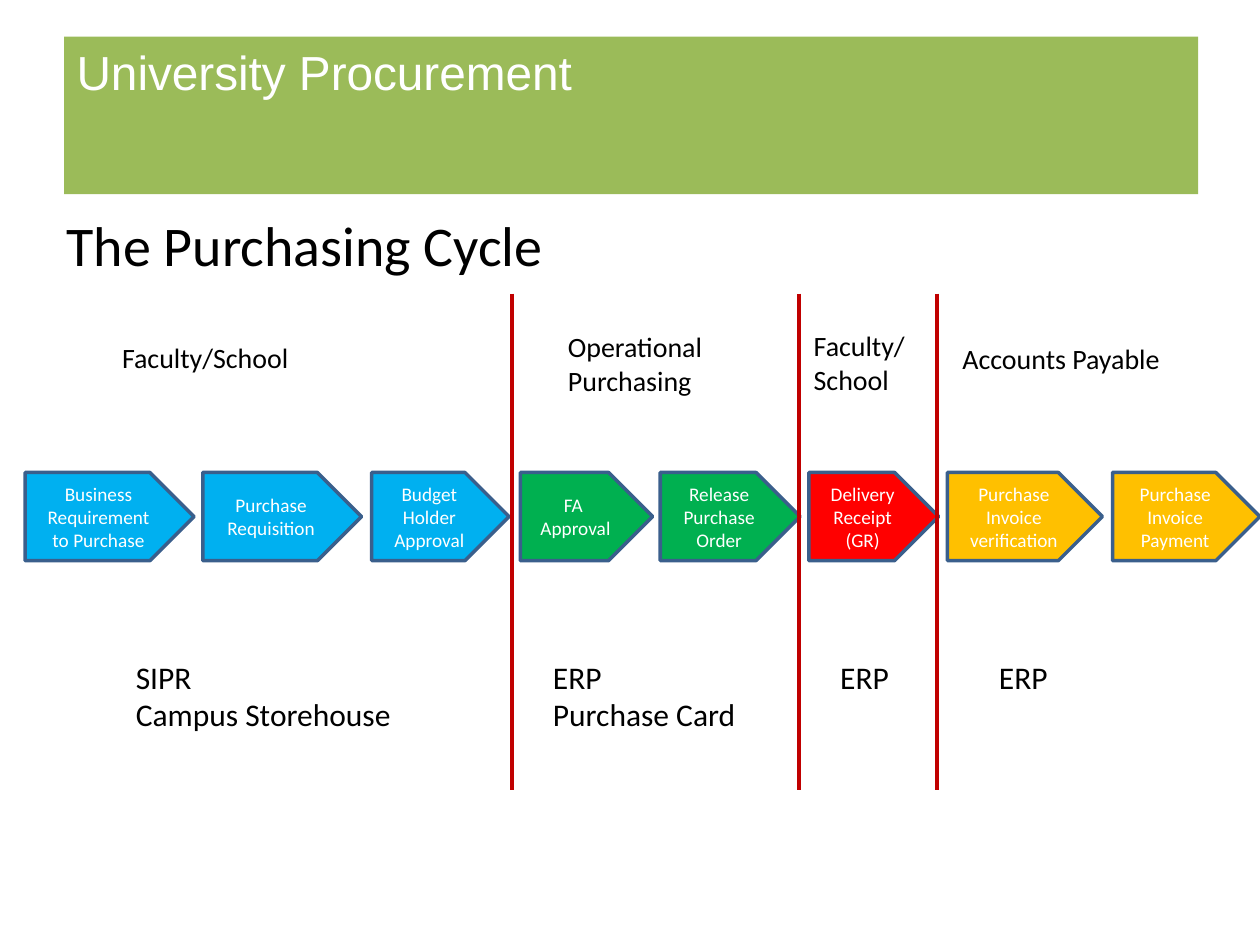
from dataclasses import dataclass
from pptx import Presentation
from pptx.dml.color import RGBColor as Rgb
from pptx.enum.shapes import MSO_CONNECTOR as Conn, MSO_SHAPE as Kind
from pptx.enum.text import MSO_ANCHOR as Anchor, MSO_AUTO_SIZE as Auto, PP_ALIGN as Align
from pptx.oxml.ns import qn
from pptx.util import Inches, Pt
from lxml.etree import SubElement

HUES = {
    "band": "9BBB59", "blue": "00B0F0", "green": "00B050", "red": "FF0000",
    "gold": "FFC000", "edge": "3A5F8C", "rule": "C00000",
    "white": "FFFFFF", "black": "000000",
}
STEP_TOP, STEP_HIGH = 3.75, 0.7
RULE_TOP, RULE_END = 2.33, 6.27


@dataclass
class Step:
    left: float
    wide: float
    hue: str
    lines: list[str]


@dataclass
class Label:
    left: float
    top: float
    wide: float
    high: float
    size: int
    lines: list[str]


STEPS = [
    Step(0.2, 1.34, "blue", ["Business Requirement to Purchase"]),
    Step(1.61, 1.26, "blue", ["Purchase Requisition"]),
    Step(2.95, 1.09, "blue", ["Budget Holder Approval"]),
    Step(4.13, 1.05, "green", ["FA ", "Approval"]),
    Step(5.24, 1.11, "green", ["Release Purchase Order"]),
    Step(6.42, 1.03, "red", ["Delivery Receipt (GR)"]),
    Step(7.52, 1.23, "gold", ["Purchase Invoice verification"]),
    Step(8.83, 1.17, "gold", ["Purchase Invoice Payment"]),
]
RULES = [4.06, 6.34, 7.44]
LABELS = [
    Label(0.43, 1.62, 9.22, 0.65, 32, ["The Purchasing Cycle"]),
    Label(0.87, 2.65, 2.32, 0.37, 16, ["Faculty/School"]),
    Label(6.36, 2.56, 1.16, 0.64, 16, ["Faculty/", "School"]),
    Label(7.54, 2.66, 2.32, 0.37, 16, ["Accounts Payable"]),
    Label(4.41, 2.57, 1.93, 0.64, 16, ["Operational Purchasing"]),
    Label(0.98, 5.17, 2.36, 0.71, 18, ["SIPR", "Campus Storehouse"]),
    Label(4.29, 5.17, 1.89, 0.71, 18, ["ERP", "Purchase Card"]),
    Label(6.57, 5.17, 0.71, 0.4, 18, ["ERP"]),
    Label(7.83, 5.17, 0.71, 0.4, 18, ["ERP"]),
]


def tint(name: str) -> Rgb:
    return Rgb.from_string(HUES[name])


def write(frame, lines: list[str], size: float, hue: str,
          face: str = "Calibri", align=Align.LEFT) -> None:
    frame.word_wrap = True
    for spot, line in enumerate(lines):
        para = frame.paragraphs[0] if spot == 0 else frame.add_paragraph()
        para.alignment = align
        run = para.add_run()
        run.text = line
        run.font.size = Pt(size)
        run.font.name = face
        run.font.color.rgb = tint(hue)


def block(slide, kind, left: float, top: float, wide: float, high: float, hue: str):
    shape = slide.shapes.add_shape(
        kind, Inches(left), Inches(top), Inches(wide), Inches(high))
    shape.shadow.inherit = False
    shape.fill.solid()
    shape.fill.fore_color.rgb = tint(hue)
    return shape


def draw_band(slide) -> None:
    band = block(slide, Kind.RECTANGLE, 0.51, 0.29, 9, 1.25, "band")
    band.line.fill.background()
    band.text_frame.vertical_anchor = Anchor.TOP
    write(band.text_frame, ["University Procurement"], 27.3, "white", "Arial")


def draw_step(slide, step: Step) -> None:
    shape = block(slide, Kind.PENTAGON, step.left, STEP_TOP, step.wide, STEP_HIGH, step.hue)
    shape.line.color.rgb = tint("edge")
    shape.line.width = Pt(2)
    shape.text_frame.vertical_anchor = Anchor.MIDDLE
    write(shape.text_frame, step.lines, 11, "white", align=Align.CENTER)


def draw_rule(slide, left: float) -> None:
    rule = slide.shapes.add_connector(
        Conn.STRAIGHT, Inches(left), Inches(RULE_TOP), Inches(left), Inches(RULE_END))
    rule.line.color.rgb = tint("rule")
    rule.line.width = Pt(2.25)
    SubElement(rule._element.spPr, qn("a:effectLst"))


def draw_label(slide, label: Label) -> None:
    box = slide.shapes.add_textbox(
        Inches(label.left), Inches(label.top), Inches(label.wide), Inches(label.high))
    write(box.text_frame, label.lines, label.size, "black")
    box.text_frame.auto_size = Auto.SHAPE_TO_FIT_TEXT


def main() -> None:
    deck = Presentation()
    deck.slide_width, deck.slide_height = Inches(10), Inches(7.5)
    slide = deck.slides.add_slide(deck.slide_layouts[6])
    draw_band(slide)
    for step in STEPS:
        draw_step(slide, step)
    for left in RULES:
        draw_rule(slide, left)
    for label in LABELS:
        draw_label(slide, label)
    deck.save("out.pptx")


if __name__ == "__main__":
    main()
